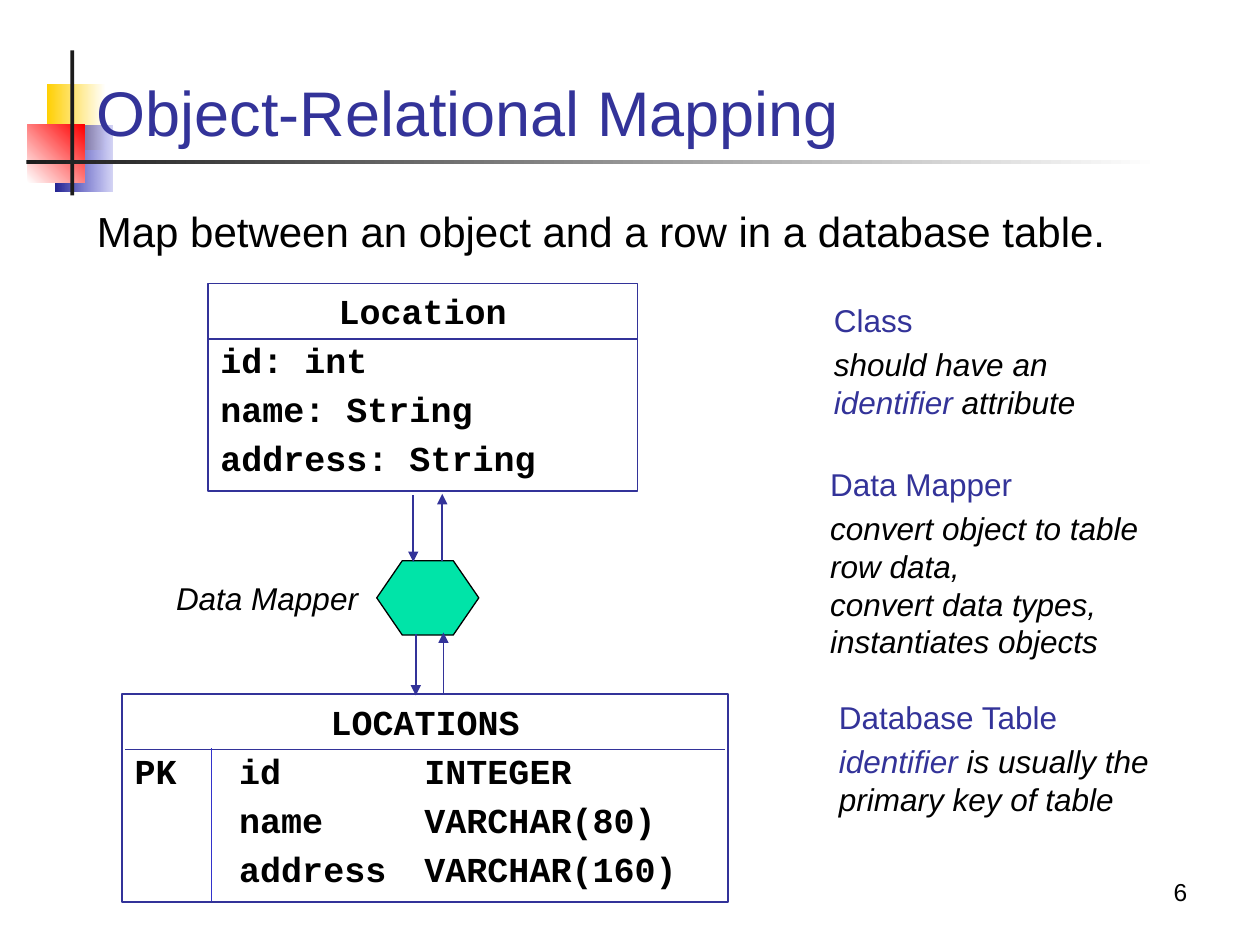
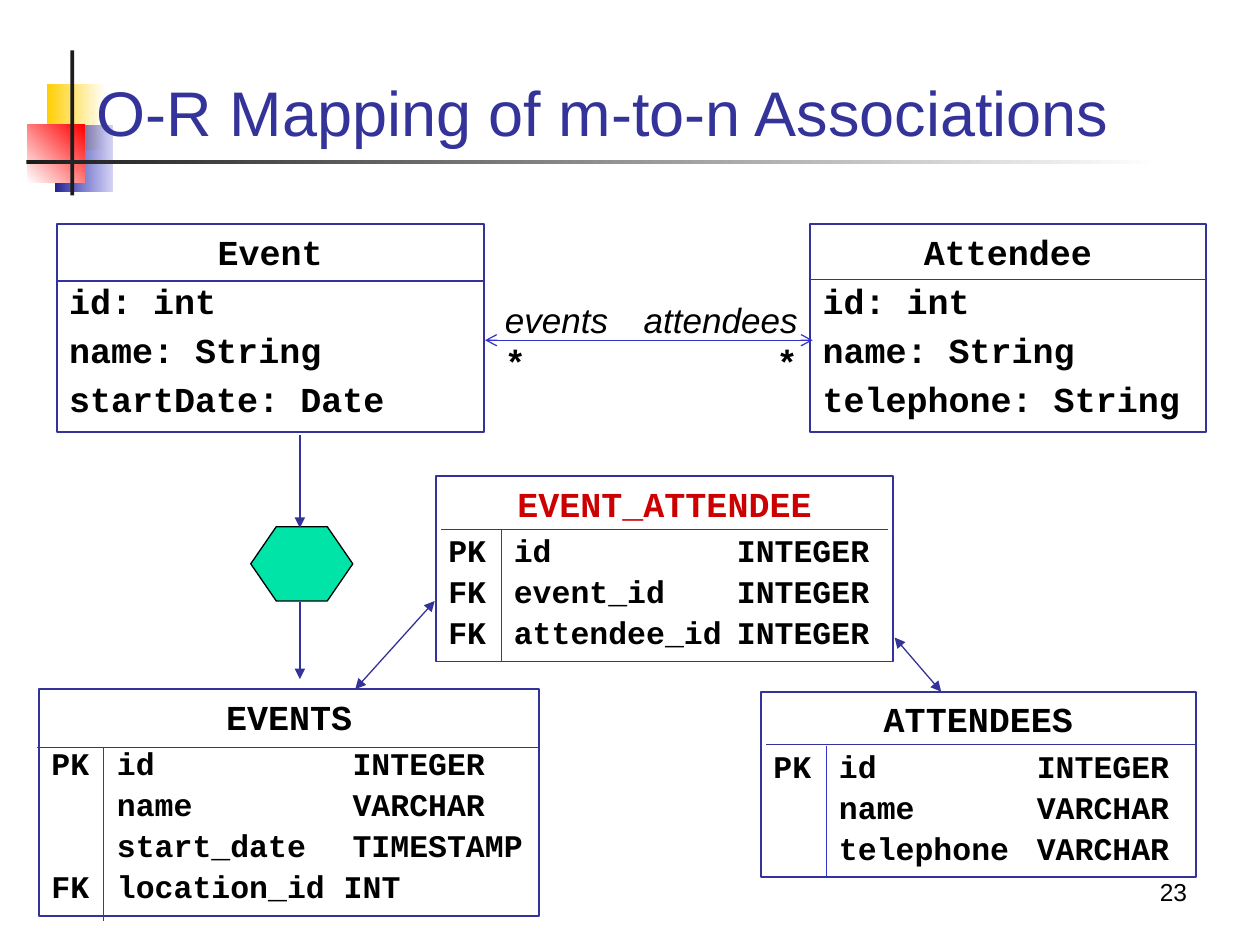
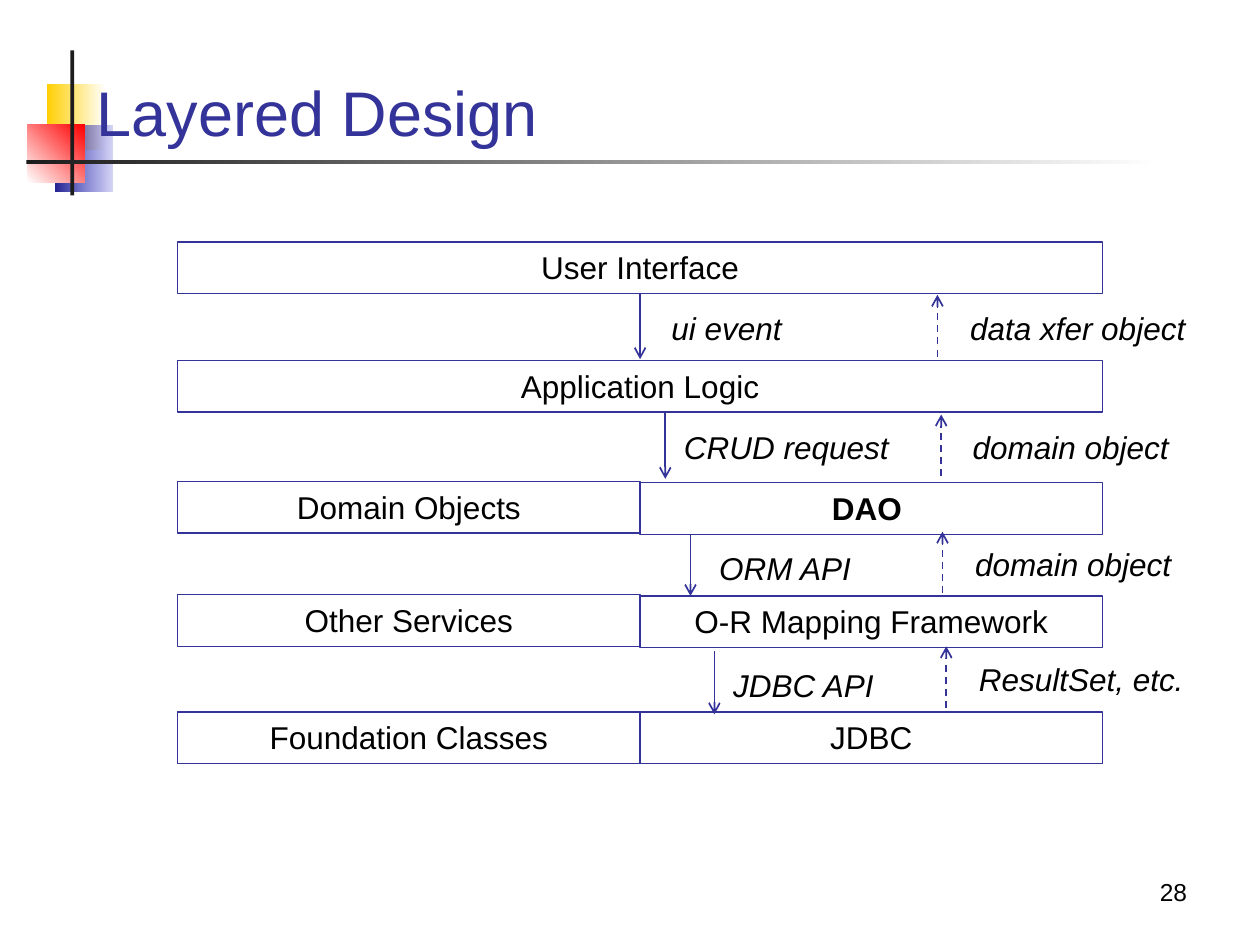
"""Build three slides on object-relational mapping and layered design."""
from dataclasses import dataclass
from typing import NamedTuple

from lxml import etree
from pptx import Presentation
from pptx.dml.color import RGBColor
from pptx.enum import dml, shapes, text
from pptx.oxml import ns
from pptx.util import Inches, Pt

NAVY = RGBColor(0x33, 0x33, 0x99)
BLUE = RGBColor(0x33, 0x33, 0xCC)
DEEP_BLUE = RGBColor(0x24, 0x24, 0x92)
YELLOW = RGBColor(0xFF, 0xCF, 0x01)
RED = RGBColor(0xFF, 0x00, 0x00)
CRIMSON = RGBColor(0xCC, 0x00, 0x00)
GREEN = RGBColor(0x00, 0xE4, 0xA8)
CHARCOAL = RGBColor(0x1C, 0x1C, 0x1C)
BLACK = RGBColor(0x00, 0x00, 0x00)
WHITE = RGBColor(0xFF, 0xFF, 0xFF)

SANS, MONO = "Arial", "Courier New"
LEFT, CENTER, RIGHT = text.PP_ALIGN.LEFT, text.PP_ALIGN.CENTER, text.PP_ALIGN.RIGHT
TOP, BOTTOM = text.MSO_ANCHOR.TOP, text.MSO_ANCHOR.BOTTOM
RECTANGLE, HEXAGON = shapes.MSO_SHAPE.RECTANGLE, shapes.MSO_SHAPE.HEXAGON
LAYER_LEFT, LAYER_WIDTH, LAYER_HEIGHT = 1.41, 7.34, 0.41


class Area(NamedTuple):
    """Left, top, width and height in inches."""
    left: float
    top: float
    width: float
    height: float


class Span(NamedTuple):
    """A stretch of text in one style."""
    words: str
    size: float = 18
    color: RGBColor = BLACK
    font: str = SANS
    bold: bool = False
    italic: bool = False


class Para(NamedTuple):
    """A paragraph of spans."""
    spans: list[Span]
    align: text.PP_ALIGN = LEFT
    before: float = 0
    tabs: tuple[float, ...] = ()


class Link(NamedTuple):
    """A straight line with optional ends."""
    start: tuple[float, float]
    end: tuple[float, float]
    width: float = 1
    color: RGBColor = NAVY
    head: str = ""
    tail: str = ""
    dashed: bool = False


class Accent(NamedTuple):
    """A gradient block of the title decoration."""
    area: Area
    first: RGBColor
    last: RGBColor
    angle: float = 0
    opacity: int = 100


class Note(NamedTuple):
    """A heading with an explanation beside the diagram."""
    area: Area
    heading: str
    spans: list[Span]


@dataclass
class Entity:
    """A class or database table with a ruled heading."""
    area: Area
    name: str
    rows: list[str]
    rule: tuple[float, float, float]
    tabs: tuple[float, ...] = ()
    key_line: tuple[float, float, float] | None = None
    row_size: float = 20
    row_gap: float = 4
    color: RGBColor = BLACK


class Layer(NamedTuple):
    """A box of the layer stack; half is 0 for full width, 1 left, 2 right."""
    name: str
    top: float
    half: int = 0
    bold: bool = False


class Message(NamedTuple):
    """An arrow between layers with its label."""
    name: str
    x: float
    start: float
    end: float
    label: Area


ACCENTS = [
    Accent(Area(0.37, 0.67, 0.47, 0.52), YELLOW, WHITE),
    Accent(Area(0.44, 1, 0.45, 0.52), DEEP_BLUE, BLUE, opacity=20),
    Accent(Area(0.22, 0.99, 0.45, 0.46), WHITE, RED, 45),
]
UPRIGHT = Area(0.56, 0.4, 0.03, 1.15)
UNDERLINE = Accent(Area(0.21, 1.27, 9, 0.03), CHARCOAL, WHITE)


def write(frame, paras: list[Para], anchor=TOP) -> None:
    """Fill a text frame with paragraphs."""
    frame.word_wrap = True
    frame.vertical_anchor = anchor
    for index, para in enumerate(paras):
        line = frame.paragraphs[0] if index == 0 else frame.add_paragraph()
        line.alignment = para.align
        line.space_before = Pt(para.before)
        if para.tabs:
            stops = etree.SubElement(line._p.get_or_add_pPr(), ns.qn("a:tabLst"))
            for stop in para.tabs:
                etree.SubElement(stops, ns.qn("a:tab"), pos=str(Inches(stop)), algn="l")
        for span in para.spans:
            for number, words in enumerate(span.words.split("\n")):
                if number:
                    line.add_line_break()
                run = line.add_run()
                run.text = words
                formats = {"name": span.font, "size": Pt(span.size),
                           "bold": span.bold, "italic": span.italic}
                for key, value in formats.items():
                    setattr(run.font, key, value)
                run.font.color.rgb = span.color


def add_text(page, area: Area, paras: list[Para], anchor=TOP) -> None:
    """Add a wrapping text box."""
    box = page.shapes.add_textbox(*map(Inches, area))
    write(box.text_frame, paras, anchor)


def add_box(page, area: Area, fill=None, line=None, width: float = 1, kind=RECTANGLE):
    """Add a preset shape with an optional fill and outline."""
    box = page.shapes.add_shape(kind, *map(Inches, area))
    box.shadow.inherit = False
    if fill is None:
        box.fill.background()
    else:
        box.fill.solid()
        box.fill.fore_color.rgb = fill
    if line is None:
        box.line.fill.background()
    else:
        box.line.color.rgb = line
        box.line.width = Pt(width)
    return box


def add_accent(page, accent: Accent) -> None:
    """Add a gradient block."""
    box = add_box(page, accent.area)
    box.fill.gradient()
    box.fill.gradient_angle = accent.angle
    for stop, color, position in zip(box.fill.gradient_stops, (accent.first, accent.last), (0, 1)):
        stop.color.rgb = color
        stop.position = position
    if accent.opacity < 100:
        last = list(box._element.iter(ns.qn("a:srgbClr")))[-1]
        etree.SubElement(last, ns.qn("a:alpha"), val=str(accent.opacity * 1000))


def add_link(page, link: Link) -> None:
    """Add a connector with its arrowheads."""
    line = page.shapes.add_connector(shapes.MSO_CONNECTOR.STRAIGHT,
                                     *map(Inches, link.start + link.end))
    line.line.color.rgb = link.color
    line.line.width = Pt(link.width)
    if link.dashed:
        line.line.dash_style = dml.MSO_LINE.DASH
    outline = line.line._get_or_add_ln()
    for tag, kind in (("a:headEnd", link.head), ("a:tailEnd", link.tail)):
        if kind:
            etree.SubElement(outline, ns.qn(tag), type=kind)
    etree.SubElement(line._element.spPr, ns.qn("a:effectLst"))


def add_entity(page, entity: Entity) -> None:
    """Add a class or table box with its rules."""
    heading = Span(entity.name, 20, entity.color, MONO, True)
    paras = [Para([heading], CENTER, 2)]
    for index, row in enumerate(entity.rows):
        gap = entity.row_gap if index else 4
        paras.append(Para([Span(row, entity.row_size, font=MONO, bold=True)],
                          before=gap, tabs=entity.tabs))
    write(add_box(page, entity.area, line=NAVY).text_frame, paras)
    left, right, y = entity.rule
    add_link(page, Link((right, y), (left, y), 0.75))
    if entity.key_line:
        x, top, bottom = entity.key_line
        add_link(page, Link((x, top), (x, bottom), 0.75, BLUE))


def add_mapper(page, left: float, top: float) -> None:
    """Add the data mapper hexagon."""
    box = add_box(page, Area(left, top, 0.81, 0.59), GREEN, BLACK, 0.75, HEXAGON)
    box.adjustments[0] = 0.343


def add_page(deck, title: str, number: int):
    """Add a slide with decoration, title and number."""
    page = deck.slides.add_slide(deck.slide_layouts[6])
    for accent in ACCENTS:
        add_accent(page, accent)
    add_box(page, UPRIGHT, CHARCOAL)
    add_accent(page, UNDERLINE)
    add_text(page, Area(0.67, 0.28, 8.66, 0.95), [Para([Span(title, 36, NAVY)])], BOTTOM)
    add_text(page, Area(7.44, 6.74, 2.08, 0.5), [Para([Span(str(number), 14)], RIGHT)], BOTTOM)
    return page


def build_mapping(deck) -> None:
    """Build the slide mapping one class to one table."""
    page = add_page(deck, "Object-Relational Mapping", 6)
    add_text(page, Area(0.67, 1.58, 8.66, 0.68),
             [Para([Span("Map between an object and a row in a database table.", 24)])])
    entities = [
        Entity(Area(0.97, 5.51, 4.81, 1.65), "LOCATIONS",
               ["PK\tid\tINTEGER", "\tname\tVARCHAR(80)", "\taddress\tVARCHAR(160)"],
               (0.99, 5.75, 5.95), (0.83, 2.3), (1.68, 5.94, 7.15)),
        Entity(Area(1.65, 2.25, 3.41, 1.65), "Location",
               ["id: int", "name: String", "address: String"], (1.65, 5.06, 2.69)),
    ]
    for entity in entities:
        add_entity(page, entity)
    identifier = Span("identifier", color=NAVY, italic=True)
    notes = [
        Note(Area(6.52, 2.34, 2.68, 1.06), "Class",
             [Span("should have an ", italic=True), identifier, Span(" attribute", italic=True)]),
        Note(Area(6.49, 3.64, 2.68, 1.66), "Data Mapper",
             [Span("convert object to table row data, \nconvert data types, instantiates objects",
                   italic=True)]),
        Note(Area(6.56, 5.49, 2.68, 1.06), "Database Table",
             [identifier, Span(" is usually the primary key of table", italic=True)]),
    ]
    for note in notes:
        add_text(page, note.area, [Para([Span(note.heading, color=NAVY)]),
                                   Para(note.spans, before=3.6)])
    add_mapper(page, 2.99, 4.45)
    add_text(page, Area(0.65, 4.55, 2.29, 0.4),
             [Para([Span("Data Mapper", italic=True)], RIGHT)])
    for x, top, bottom in ((3.28, 3.93, 4.46), (3.3, 5.03, 5.52)):
        add_link(page, Link((x, top), (x, bottom), tail="triangle"))
    for x, top, bottom in ((3.51, 3.92, 4.45), (3.52, 5.02, 5.51)):
        add_link(page, Link((x, top), (x, bottom), head="triangle"))


def build_associations(deck) -> None:
    """Build the slide on many-to-many associations."""
    page = add_page(deck, "O-R Mapping of m-to-n Associations", 23)
    entities = [
        Entity(Area(0.45, 1.78, 3.39, 1.65), "Event",
               ["id: int", "name: String", "startDate: Date"], (0.45, 3.84, 2.23)),
        Entity(Area(6.43, 1.78, 3.14, 1.65), "Attendee",
               ["id: int", "name: String", "telephone: String"], (6.43, 9.56, 2.22)),
        Entity(Area(6.04, 5.49, 3.45, 1.47), "ATTENDEES",
               ["PK\tid\tINTEGER", "\tname\tVARCHAR", "\ttelephone\tVARCHAR"],
               (6.08, 9.5, 5.91), (0.52, 2.09), (6.56, 5.92, 6.96), 18, 1.8),
        Entity(Area(0.31, 5.47, 3.97, 1.8), "EVENTS",
               ["PK\tid\tINTEGER", "\tname\tVARCHAR", "\tstart_date \tTIMESTAMP",
                "FK\tlocation_id INT"],
               (0.29, 4.28, 5.93), (0.52, 2.39), (0.82, 5.93, 7.31), 18, 1.8),
        Entity(Area(3.46, 3.78, 3.63, 1.47), "EVENT_ATTENDEE",
               ["PK\tid\tINTEGER", "FK\tevent_id\tINTEGER", "FK\tattendee_id\tINTEGER"],
               (3.5, 7.05, 4.2), (0.52, 2.29), (3.98, 4.21, 5.25), 18, 1.8, CRIMSON),
    ]
    for entity in entities:
        add_entity(page, entity)
    add_mapper(page, 1.99, 4.18)
    links = [
        Link((2.38, 3.45), (2.38, 4.19), tail="triangle"),
        Link((2.38, 4.78), (2.38, 5.39), tail="triangle"),
        Link((3.85, 2.7), (6.45, 2.7), 0.75, BLUE, "arrow", "arrow"),
        Link((3.45, 4.77), (2.82, 5.47), 0.75, head="triangle", tail="triangle"),
        Link((7.1, 5.06), (7.47, 5.49), 0.75, head="triangle", tail="triangle"),
    ]
    for link in links:
        add_link(page, link)
    for role, left, align in (("attendees", 5, RIGHT), ("events", 3.91, LEFT)):
        add_text(page, Area(left, 2.32, 1.43, 0.77),
                 [Para([Span(role, 20, italic=True)], align),
                  Para([Span("*", 20, font=MONO, bold=True)], align)])


def build_layers(deck) -> None:
    """Build the layered design slide."""
    page = add_page(deck, "Layered Design", 28)
    layers = [
        Layer("User Interface", 1.92),
        Layer("Application Logic", 2.86),
        Layer("Domain Objects", 3.82, 1),
        Layer("DAO ", 3.83, 2, True),
        Layer("Other Services", 4.72, 1),
        Layer("O-R Mapping Framework", 4.73, 2),
        Layer("Foundation Classes", 5.65, 1),
        Layer("JDBC", 5.65, 2),
    ]
    for layer in layers:
        width = LAYER_WIDTH / 2 if layer.half else LAYER_WIDTH
        left = LAYER_LEFT + (width if layer.half == 2 else 0)
        box = add_box(page, Area(left, layer.top, width, LAYER_HEIGHT), line=NAVY, width=0.75)
        write(box.text_frame, [Para([Span(layer.name, bold=layer.bold)], CENTER)])
    messages = [
        Message("ui event", 5.08, 2.33, 2.85, Area(5.23, 2.4, 1.3, 0.4)),
        Message("CRUD request", 5.28, 3.28, 3.8, Area(5.33, 3.35, 1.92, 0.4)),
        Message("ORM API", 5.48, 4.24, 4.73, Area(5.61, 4.31, 1.7, 0.4)),
        Message("JDBC API", 5.67, 5.17, 5.67, Area(5.72, 5.24, 1.7, 0.4)),
        Message("data xfer object", 7.44, 2.83, 2.34, Area(7.6, 2.4, 2.01, 0.4)),
        Message("domain object", 7.47, 3.78, 3.29, Area(7.62, 3.35, 2.01, 0.4)),
        Message("domain object", 7.48, 4.71, 4.22, Area(7.64, 4.28, 1.88, 0.4)),
        Message("ResultSet, etc.", 7.51, 5.62, 5.13, Area(7.67, 5.19, 1.88, 0.4)),
    ]
    for message in messages:
        add_link(page, Link((message.x, message.start), (message.x, message.end),
                            tail="arrow", dashed=message.end < message.start))
        add_text(page, message.label, [Para([Span(message.name, italic=True)])])


def main() -> None:
    """Build and save the deck."""
    deck = Presentation()
    deck.slide_width, deck.slide_height = Inches(10), Inches(7.5)
    build_mapping(deck)
    build_associations(deck)
    build_layers(deck)
    deck.save("out.pptx")


if __name__ == "__main__":
    main()
